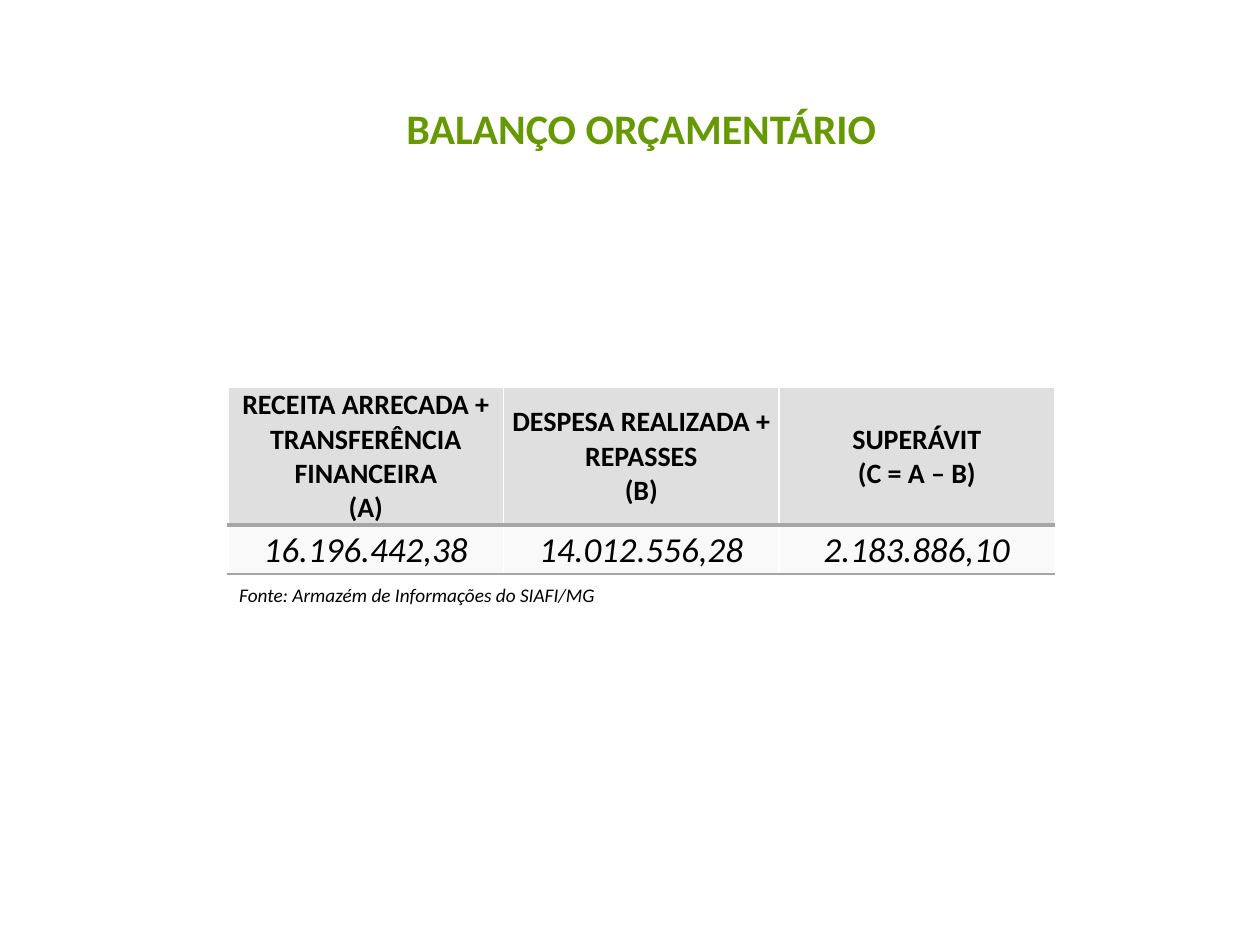
from lxml.etree import SubElement
from pptx import Presentation
from pptx.dml.color import RGBColor
from pptx.enum.text import MSO_ANCHOR, PP_ALIGN
from pptx.oxml.ns import qn
from pptx.util import Inches, Pt

HEX = {"title": "669900", "text": "000000", "head": "DFDFDF",
       "body": "F9F9F9", "rule": "A6A6A6", "grid": "FFFFFF"}


def style(para, size, color, bold=False, italic=False, align=PP_ALIGN.CENTER):
    para.alignment = align
    font = para.font
    font.name, font.size = "Calibri", Pt(size)
    font.bold, font.italic = bold, italic
    font.color.rgb = RGBColor.from_string(HEX[color])


def border(cell, sides):
    props = cell._tc.get_or_add_tcPr()
    for spot, (side, color, width) in enumerate(sides):
        line = SubElement(props, qn("a:ln" + side), w=str(Pt(width)))
        fill = SubElement(line, qn("a:solidFill"))
        SubElement(fill, qn("a:srgbClr"), val=HEX[color])
        props.insert(spot, line)


deck = Presentation()
deck.slide_width, deck.slide_height = Inches(10), Inches(7.5)
slide = deck.slides.add_slide(deck.slide_layouts[5])

title = slide.shapes.title
title.left, title.top = Inches(0.59), Inches(0.76)
title.width, title.height = Inches(9), Inches(0.87)
title.text_frame.text = "BALANÇO ORÇAMENTÁRIO"
title.text_frame.vertical_anchor = MSO_ANCHOR.TOP
style(title.text_frame.paragraphs[0], 24, "title", bold=True)

rows = [
    ["RECEITA ARRECADA + TRANSFERÊNCIA FINANCEIRA\n(A)",
     "DESPESA REALIZADA + REPASSES\n(B)",
     "SUPERÁVIT\n(C = A – B)"],
    ["16.196.442,38", "14.012.556,28", "2.183.886,10"],
]
looks = [
    (1.08, "head", 16, True, ("grid", 1), ("rule", 2.25)),
    (0.39, "body", 20, False, ("rule", 2.25), ("rule", 1)),
]
frame = slide.shapes.add_table(2, 3, Inches(1.81), Inches(3.07),
                               Inches(6.56), Inches(1.47))
table = frame.table
for row, texts, look in zip(table.rows, rows, looks):
    high, fill, size, bold, top, base = look
    row.height = Inches(high)
    for cell, text in zip(row.cells, texts):
        cell.text = text
        cell.vertical_anchor = MSO_ANCHOR.MIDDLE
        cell.margin_left = cell.margin_right = cell.margin_top = Inches(0.01)
        cell.margin_bottom = 0
        cell.fill.solid()
        cell.fill.fore_color.rgb = RGBColor.from_string(HEX[fill])
        border(cell, [("L", "grid", 1), ("R", "grid", 1),
                      ("T", *top), ("B", *base)])
        for para in cell.text_frame.paragraphs:
            style(para, size, "text", bold=bold, italic=not bold)

note = slide.shapes.add_textbox(Inches(1.8), Inches(4.62),
                                Inches(7.95), Inches(0.2)).text_frame
note.word_wrap = True
note.vertical_anchor = MSO_ANCHOR.MIDDLE
note.text = "Fonte: Armazém de Informações do SIAFI/MG"
style(note.paragraphs[0], 11, "text", italic=True, align=PP_ALIGN.LEFT)

deck.save("out.pptx")
